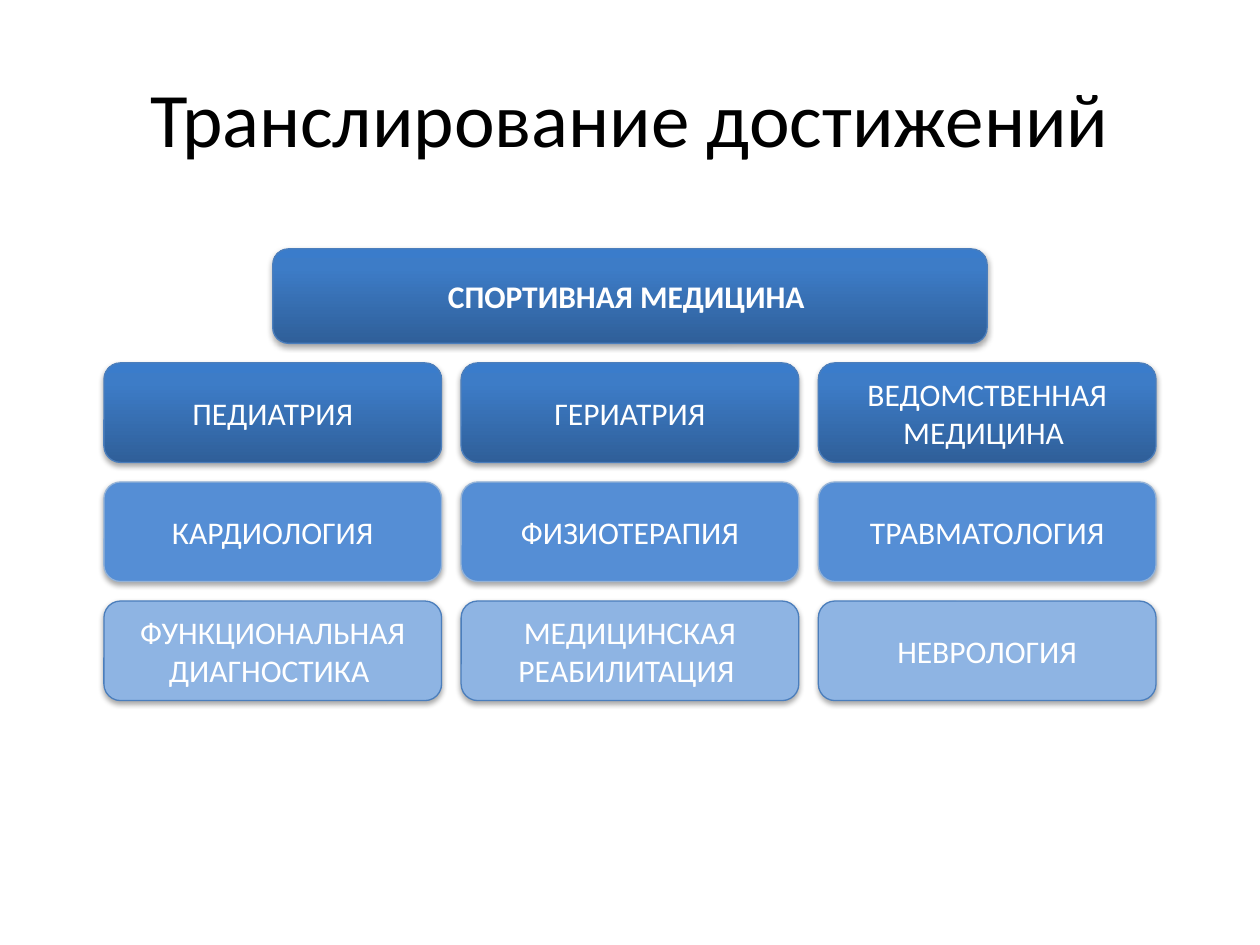
from copy import deepcopy
from dataclasses import dataclass

from lxml.etree import SubElement
from pptx import Presentation
from pptx.dml.color import RGBColor
from pptx.enum.shapes import MSO_SHAPE as Preset
from pptx.enum.text import MSO_ANCHOR as Anchor, PP_ALIGN as Align
from pptx.oxml.ns import qn
from pptx.shapes.autoshape import Shape
from pptx.slide import Slide
from pptx.util import Inches, Pt

COLORS = {
    "title": "000000",
    "label": "FFFFFF",
    "shadow": "000000",
    "deep": "2F5F99",
    "middle": "3D7CC7",
    "top": "3A7CCB",
    "medium": "558ED5",
    "light": "8EB4E3",
    "edge": "4B7EBC",
    "soft_edge": "95B3D7",
}
FONT = "Calibri"
SLIDE_WIDTH, SLIDE_HEIGHT = 10, 7.5
CARD_WIDTH, CARD_HEIGHT, GAP = 2.68, 0.79, 0.155
GRID_LEFT = (SLIDE_WIDTH - 3 * CARD_WIDTH - 2 * GAP) / 2
GRID_TOP = 2.88


@dataclass(frozen=True)
class Frame:
    left: float
    top: float
    width: float
    height: float

    def lengths(self) -> list[int]:
        return [Inches(n) for n in (self.left, self.top, self.width, self.height)]


@dataclass(frozen=True)
class Style:
    stops: tuple[tuple[float, str], ...]
    edge: str


@dataclass(frozen=True)
class Row:
    labels: tuple[str, str, str]
    style: Style


GRADED = Style(((0, "deep"), (0.8, "middle"), (1, "top")), "edge")
MEDIUM = Style(((0, "medium"),), "soft_edge")
LIGHT = Style(((0, "light"),), "edge")

ROWS = (
    Row(("ПЕДИАТРИЯ", "ГЕРИАТРИЯ", "ВЕДОМСТВЕННАЯ МЕДИЦИНА "), GRADED),
    Row(("КАРДИОЛОГИЯ", "ФИЗИОТЕРАПИЯ", "ТРАВМАТОЛОГИЯ"), MEDIUM),
    Row(("ФУНКЦИОНАЛЬНАЯ ДИАГНОСТИКА ", "МЕДИЦИНСКАЯ РЕАБИЛИТАЦИЯ ", "НЕВРОЛОГИЯ"), LIGHT),
)


def color(name: str) -> RGBColor:
    return RGBColor.from_string(COLORS[name])


def write(box: Shape, text: str, size: int, ink: str, bold: bool = False) -> None:
    frame = box.text_frame
    frame.word_wrap = True
    frame.vertical_anchor = Anchor.MIDDLE
    para = frame.paragraphs[0]
    para.text = text
    para.alignment = Align.CENTER
    para.font.name = FONT
    para.font.size = Pt(size)
    para.font.bold = bold
    para.font.color.rgb = color(ink)


def paint(box: Shape, style: Style) -> None:
    fill = box.fill
    if len(style.stops) == 1:
        fill.solid()
        fill.fore_color.rgb = color(style.stops[0][1])
        return
    fill.gradient()
    fill.gradient_angle = 90
    stop_list = box.element.spPr.find(".//" + qn("a:gsLst"))
    while len(stop_list) < len(style.stops):
        stop_list.append(deepcopy(stop_list[-1]))
    for stop, (position, name) in zip(fill.gradient_stops, style.stops):
        stop.position = position
        stop.color.rgb = color(name)


def add_shadow(box: Shape) -> None:
    box.shadow.inherit = False
    effects = box.element.spPr.find(qn("a:effectLst"))
    shadow = SubElement(
        effects, qn("a:outerShdw"), blurRad=str(Pt(3.15)), dist=str(Pt(1.8)),
        dir="5400000", rotWithShape="0",
    )
    tone = SubElement(shadow, qn("a:srgbClr"), val=COLORS["shadow"])
    SubElement(tone, qn("a:alpha"), val="35000")


def add_card(page: Slide, frame: Frame, text: str, style: Style, bold: bool = False) -> None:
    box = page.shapes.add_shape(Preset.ROUNDED_RECTANGLE, *frame.lengths())
    paint(box, style)
    box.line.color.rgb = color(style.edge)
    box.line.width = Pt(0.75)
    add_shadow(box)
    write(box, text, 18, "label", bold)


def card_frame(column: int, row: int) -> Frame:
    return Frame(
        GRID_LEFT + column * (CARD_WIDTH + GAP),
        GRID_TOP + row * (CARD_HEIGHT + GAP),
        CARD_WIDTH,
        CARD_HEIGHT,
    )


def main() -> None:
    deck = Presentation()
    deck.slide_width, deck.slide_height = Inches(SLIDE_WIDTH), Inches(SLIDE_HEIGHT)
    page = deck.slides.add_slide(deck.slide_layouts[6])

    title_frame = Frame(0.05 * SLIDE_WIDTH, 0.04 * SLIDE_HEIGHT, 0.9 * SLIDE_WIDTH, 1.25)
    title = page.shapes.add_textbox(*title_frame.lengths())
    write(title, "Транслирование достижений", 44, "title")

    header_width, header_height = 5.67, 0.75
    header = Frame(
        (SLIDE_WIDTH - header_width) / 2, GRID_TOP - GAP - header_height,
        header_width, header_height,
    )
    add_card(page, header, "СПОРТИВНАЯ МЕДИЦИНА ", GRADED, bold=True)

    for row_index, row in enumerate(ROWS):
        for column, label in enumerate(row.labels):
            add_card(page, card_frame(column, row_index), label, row.style)

    deck.save("out.pptx")


if __name__ == "__main__":
    main()
